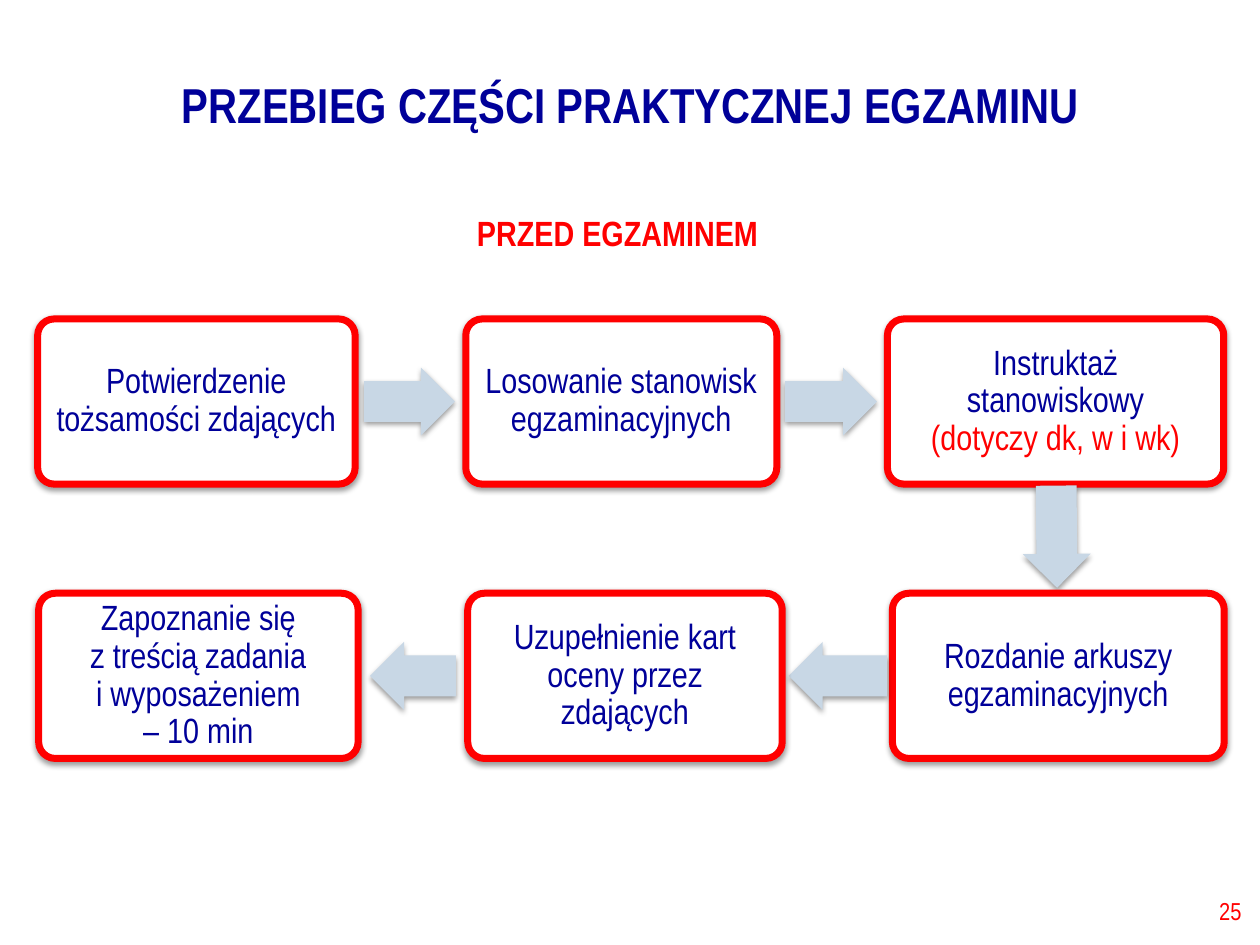
from dataclasses import dataclass

from lxml import etree
from pptx import Presentation
from pptx import util as u
from pptx.dml.color import RGBColor
from pptx.enum import shapes, text
from pptx.oxml import ns


@dataclass(frozen=True)
class Theme:
    font: str = "Arial Narrow"
    navy: RGBColor = RGBColor(0x00, 0x00, 0x99)
    red: RGBColor = RGBColor(0xFF, 0x00, 0x00)
    white: RGBColor = RGBColor(0xFF, 0xFF, 0xFF)
    arrow: RGBColor = RGBColor(0xC8, 0xD7, 0xE5)
    title_size: int = 28
    body_size: int = 20
    number_size: int = 14
    border: int = 4


THEME = Theme()
STEP_HEIGHT, ARROW_HEIGHT = 3.33, 1.37
TOP_ROW, BOTTOM_ROW = 6.43, 11.96
CENTRE, RIGHT = text.PP_ALIGN.CENTER, text.PP_ALIGN.RIGHT

# Steps in order: left, top, width, navy text, red text
STEPS = [
    (0.76, TOP_ROW, 6.4, "Potwierdzenie tożsamości zdających", ""),
    (9.39, TOP_ROW, 6.27, "Losowanie stanowisk egzaminacyjnych", ""),
    (17.89, TOP_ROW, 6.78, "Instruktaż stanowiskowy", "(dotyczy dk, w i wk)"),
    (17.99, BOTTOM_ROW, 6.69, "Rozdanie arkuszy egzaminacyjnych", ""),
    (9.43, BOTTOM_ROW, 6.34, "Uzupełnienie kart oceny przez zdających", ""),
    (0.78, BOTTOM_ROW, 6.44,
     "Zapoznanie się\vz treścią zadania\vi wyposażeniem\v– 10 min", ""),
]

# Arrow after each step: left, vertical centre, length, rotation
TOP_MIDDLE, BOTTOM_MIDDLE = (row + STEP_HEIGHT / 2 for row in (TOP_ROW, BOTTOM_ROW))
ARROWS = [
    (7.34, TOP_MIDDLE, 1.83, 0),
    (15.83, TOP_MIDDLE, 1.85, 0),
    (20.27, 10.82, 2.06, 89.5),
    (15.9, BOTTOM_MIDDLE, 1.98, 180),
    (7.46, BOTTOM_MIDDLE, 1.73, 180),
]


def add_shadow(shape):
    shape.shadow.inherit = False
    effects = shape._element.spPr.find(ns.qn("a:effectLst"))
    shadow = etree.SubElement(effects, ns.qn("a:outerShdw"), blurRad="40000",
                              dist="20000", dir="5400000", rotWithShape="0")
    colour = etree.SubElement(shadow, ns.qn("a:srgbClr"), val="000000")
    etree.SubElement(colour, ns.qn("a:alpha"), val="38000")


def style_paragraph(paragraph, size, align=CENTRE, bold=False, colour=None):
    paragraph.alignment = align
    paragraph.line_spacing = 0.9
    font = paragraph.font
    font.name, font.size, font.bold = THEME.font, u.Pt(size), bold
    if colour is not None:
        font.color.rgb = colour


def add_label(slide, place, wording, size, colour, align=CENTRE, bold=False):
    frame = slide.shapes.add_textbox(*map(u.Cm, place)).text_frame
    frame.word_wrap = True
    frame.vertical_anchor = text.MSO_ANCHOR.MIDDLE
    frame.text = wording
    style_paragraph(frame.paragraphs[0], size, align, bold, colour)


def add_step(slide, left, top, width, wording, remark):
    step = slide.shapes.add_shape(shapes.MSO_SHAPE.ROUNDED_RECTANGLE, u.Cm(left),
                                  u.Cm(top), u.Cm(width), u.Cm(STEP_HEIGHT))
    step.adjustments[0] = 0.1
    step.fill.solid()
    step.fill.fore_color.rgb = THEME.white
    step.line.color.rgb = THEME.red
    step.line.width = u.Pt(THEME.border)
    add_shadow(step)

    frame = step.text_frame
    frame.word_wrap = True
    frame.vertical_anchor = text.MSO_ANCHOR.MIDDLE
    frame.margin_left = frame.margin_right = u.Cm(0.2)
    frame.margin_top = frame.margin_bottom = u.Cm(0.2)
    paragraph = frame.paragraphs[0]
    paragraph.text = wording
    if remark:
        paragraph.add_line_break()
        run = paragraph.add_run()
        run.text = remark
    style_paragraph(paragraph, THEME.body_size)
    for run in paragraph.runs:
        run.font.color.rgb = THEME.red if run.text == remark else THEME.navy


def add_arrow(slide, left, middle, length, rotation):
    arrow = slide.shapes.add_shape(
        shapes.MSO_SHAPE.RIGHT_ARROW, u.Cm(left), u.Cm(middle - ARROW_HEIGHT / 2),
        u.Cm(length), u.Cm(ARROW_HEIGHT))
    arrow.adjustments[0] = 0.6
    arrow.rotation = rotation
    arrow.fill.solid()
    arrow.fill.fore_color.rgb = THEME.arrow
    arrow.line.fill.background()
    add_shadow(arrow)


def main():
    deck = Presentation()
    deck.slide_width, deck.slide_height = u.Cm(25.4), u.Cm(19.05)
    slide = deck.slides.add_slide(deck.slide_layouts[6])

    # Headings and page number
    add_label(slide, (1.75, 1.63, 21.9, 1.09), "PRZEBIEG CZĘŚCI PRAKTYCZNEJ EGZAMINU",
              THEME.title_size, THEME.navy, bold=True)
    add_label(slide, (1.5, 4.19, 21.9, 1.09), "PRZED EGZAMINEM",
              THEME.body_size, THEME.red, bold=True)
    add_label(slide, (19.56, 17.88, 5.72, 1.02), "25",
              THEME.number_size, THEME.red, RIGHT)

    # Process: each step is followed by its arrow, except the last
    for number, step in enumerate(STEPS):
        add_step(slide, *step)
        if number < len(ARROWS):
            add_arrow(slide, *ARROWS[number])

    deck.save("out.pptx")


if __name__ == "__main__":
    main()
